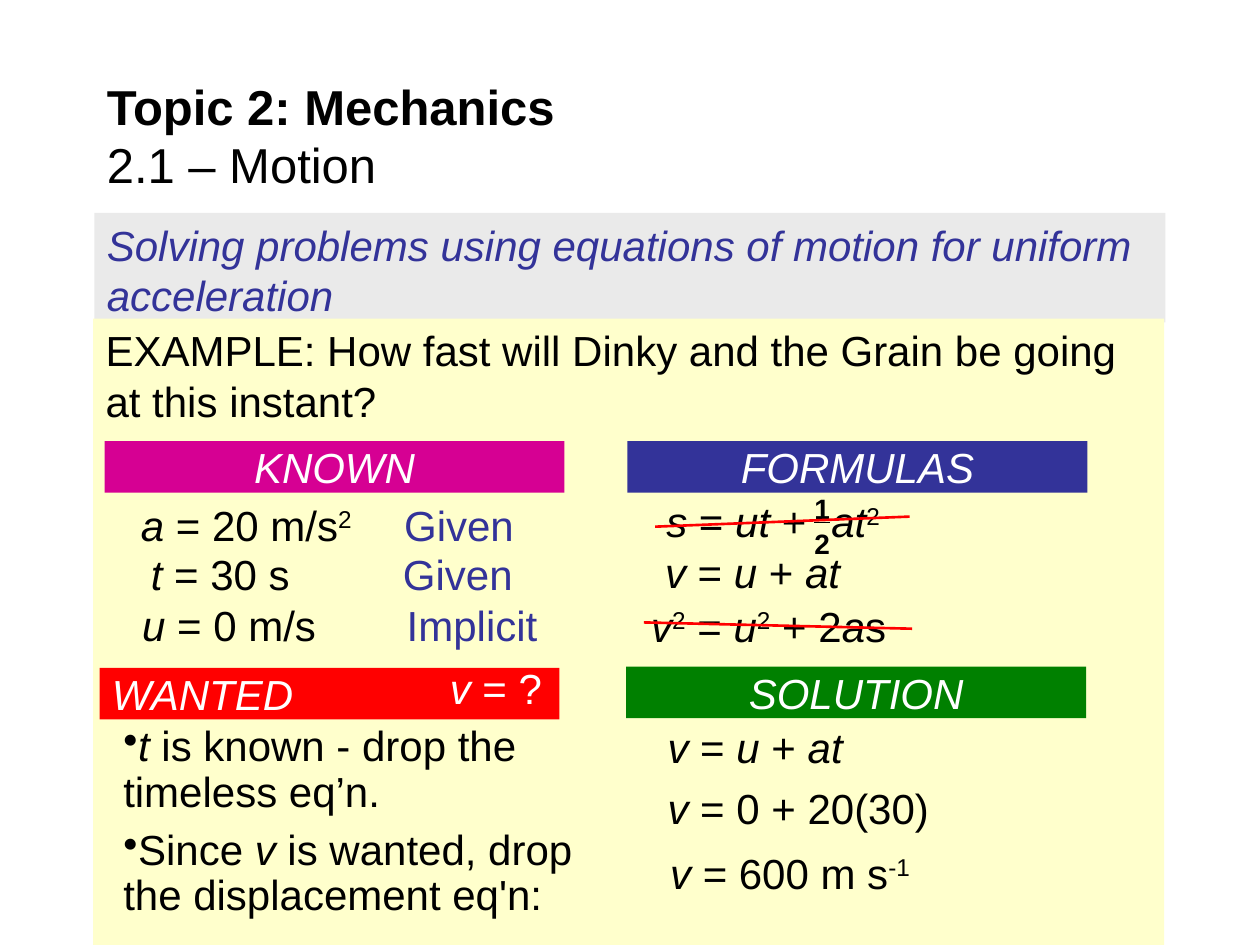
from dataclasses import dataclass

from lxml.etree import SubElement
from pptx import Presentation
from pptx.dml.color import RGBColor as Color
from pptx.enum.shapes import MSO_CONNECTOR as Connector
from pptx.enum.shapes import MSO_SHAPE as Shape
from pptx.enum.text import MSO_ANCHOR as Anchor
from pptx.enum.text import PP_ALIGN as Align
from pptx.oxml.ns import qn
from pptx.util import Inches, Pt


@dataclass(frozen=True)
class Theme:
    font: str = "Arial"
    title: int = 28
    body: int = 24
    fraction: int = 16
    gap: int = 3
    tight: float = 0.9
    black: str = "000000"
    white: str = "FFFFFF"
    blue: str = "333399"
    red: str = "FF0000"
    green: str = "008000"
    magenta: str = "D60093"
    grey: str = "EAEAEA"
    cream: str = "FFFFCC"


theme = Theme()
deck = Presentation()
deck.slide_width, deck.slide_height = Inches(10), Inches(7.5)
column, row = deck.slide_width / 100, deck.slide_height / 75
slide = deck.slides.add_slide(deck.slide_layouts[6])


def place(left, top, width, height, fill=None):
    cell = [round(v) for v in (left * column, top * row, width * column, height * row)]
    if fill is None:
        return slide.shapes.add_textbox(*cell).text_frame
    panel = slide.shapes.add_shape(Shape.RECTANGLE, *cell)
    panel.shadow.inherit = False
    panel.fill.solid()
    panel.fill.fore_color.rgb = Color.from_string(fill)
    panel.line.fill.background()
    return panel.text_frame


def write(frame, lines, color=theme.black, size=theme.body, align=Align.LEFT,
          spacing=theme.tight, gap=theme.gap, bold=False, anchor=Anchor.TOP):
    frame.word_wrap = True
    frame.vertical_anchor = anchor
    for number, line in enumerate(lines.split("\n")):
        paragraph = frame.add_paragraph() if number else frame.paragraphs[0]
        paragraph.alignment = align
        paragraph.line_spacing = spacing
        paragraph.space_before = Pt(gap)
        font = paragraph.font
        font.name, font.size, font.bold = theme.font, Pt(size), bold
        font.color.rgb = Color.from_string(color)
        for part, stretch in enumerate(line.split("_")):
            for level, words in enumerate(stretch.split("^")):
                if words:
                    run = paragraph.add_run()
                    run.text = words
                    if part % 2:
                        run.font.italic = True
                    if level % 2:
                        run.font._element.set("baseline", "30000")
    return frame


write(place(7.5, 16.9, 85, 8.7, theme.grey),
      "_Solving problems using equations of motion for uniform acceleration_",
      theme.blue, spacing=1)

heading = write(place(7.5, 5.8, 85, 9.8), "Topic 2: Mechanics\n2.1 – Motion",
                size=theme.title, spacing=1, gap=0, anchor=Anchor.MIDDLE)
heading.paragraphs[0].font.bold = True

write(place(7.4, 25.3, 85, 49.7, theme.cream),
      "EXAMPLE: How fast will Dinky and the Grain be going at this instant?", spacing=1)

for left, top, label, fill, align in (
    (8.3, 35, "KNOWN", theme.magenta, Align.CENTER),
    (49.8, 35, "FORMULAS", theme.blue, Align.CENTER),
    (7.9, 53, "WANTED", theme.red, Align.LEFT),
    (49.7, 52.9, "SOLUTION", theme.green, Align.CENTER),
):
    write(place(left, top, 36.5, 4.1, fill), f"_{label}_", theme.white, align=align)

write(place(32.1, 52.5, 11.9, 4.1), "_v_ = ?", theme.white, align=Align.RIGHT)

for top, left, quantity, source_left, source in (
    (39.6, 10.2, "_a_ = 20 m/s^2^", 31.1, "Given"),
    (43.5, 11, "_t_ = 30 s", 31, "Given"),
    (47.5, 10.3, "_u_ = 0 m/s", 31.3, "Implicit"),
):
    write(place(left, top, 23, 4.1), quantity)
    write(place(source_left, top, 18.3, 4.1), source, theme.blue)

for left, top, equation in (
    (51.9, 39.3, "_s_ = _ut_ +"),
    (65, 39.3, "_at_^2^"),
    (51.8, 43.3, "_v_ = _u_ + _at_"),
    (50.7, 47.6, "_v_^2^ = _u_^2^ + 2_a_s"),
    (52, 57.2, "_v_ = _u_ + _at_"),
    (52, 62.1, "_v_ = 0 + 20(30)"),
    (52.2, 67.2, "_v_ = 600 m s^-1^"),
):
    write(place(left, top, 28.5, 3.9), equation)

half = write(place(63.5, 38.8, 3.5, 4.6), "1\n2", size=theme.fraction,
             align=Align.CENTER, bold=True)
half.paragraphs[0].font.underline = True

for top, reason in (
    (57.1, "_t_ is known - drop the timeless eq’n."),
    (65.3, "Since _v_ is wanted, drop the displacement eq'n:"),
):
    reasons = write(place(8.8, top, 39.5, 8.6), reason)
    properties = reasons.paragraphs[0]._p.get_or_add_pPr()
    properties.set("marL", "0")
    properties.set("indent", "0")
    bullet = properties.makeelement(qn("a:buChar"), {"char": "•"})
    properties.find(qn("a:defRPr")).addprevious(bullet)

for start_x, start_y, end_x, end_y in ((51.1, 49.4, 72.4, 49.9), (52, 41.8, 72.2, 41)):
    strike = slide.shapes.add_connector(
        Connector.STRAIGHT, round(start_x * column), round(start_y * row),
        round(end_x * column), round(end_y * row))
    strike.line.color.rgb = Color.from_string(theme.red)
    strike.line.width = Pt(1.5)
    SubElement(strike._element.spPr, qn("a:effectLst"))

deck.save("out.pptx")
